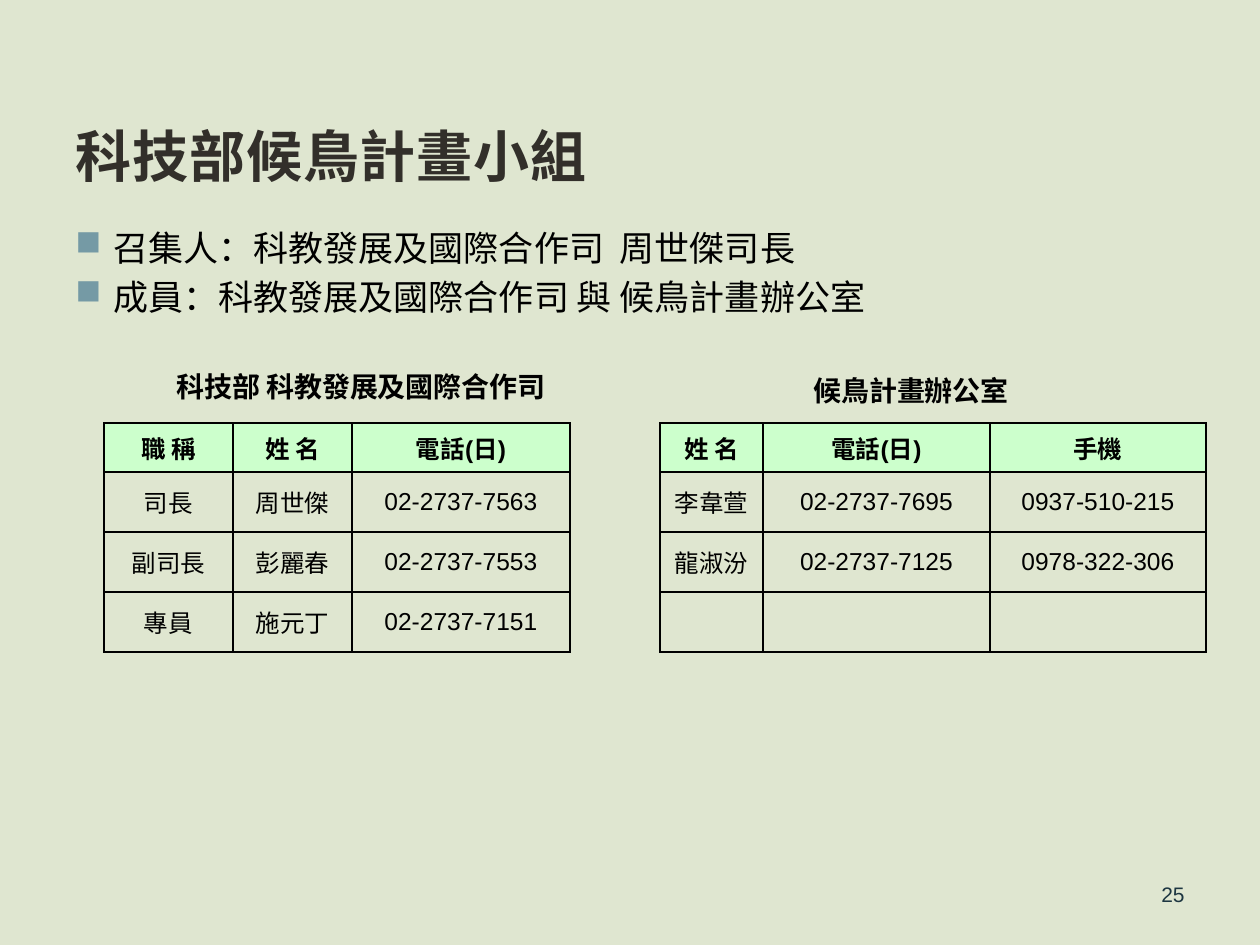
from lxml import etree
from pptx import Presentation
from pptx import util as u
from pptx.dml.color import RGBColor
from pptx.enum import text
from pptx.oxml import ns

PX = 914400 / 126
BACKGROUND = RGBColor(0xDF, 0xE6, 0xD0)
TITLE = RGBColor(0x32, 0x2F, 0x2A)
BLACK = RGBColor(0, 0, 0)
NUMBER = RGBColor(0x1D, 0x36, 0x41)
HEADER = RGBColor(0xCC, 0xFF, 0xCC)
BULLET = RGBColor(0x75, 0x9A, 0xA5)

presentation = Presentation()
presentation.slide_width = round(1260 * PX)
presentation.slide_height = round(945 * PX)
slide = presentation.slides.add_slide(presentation.slide_layouts[6])
slide.background.fill.solid()
slide.background.fill.fore_color.rgb = BACKGROUND


def style(paragraph, size, color=BLACK, bold=False, name="Arial"):
    paragraph.font.size = u.Pt(size)
    paragraph.font.color.rgb = color
    paragraph.font.bold = bold
    paragraph.font.name = name


def add_text(box, words, anchor=text.MSO_ANCHOR.MIDDLE, wrap=True):
    """Add a text box at box (left, top, width, height in px) and return its paragraphs."""
    frame = slide.shapes.add_textbox(*(round(value * PX) for value in box)).text_frame
    frame.word_wrap = wrap
    frame.vertical_anchor = anchor
    frame.text = words
    return frame.paragraphs


title = add_text((63, 38, 1134, 157), "科技部候鳥計畫小組", text.MSO_ANCHOR.BOTTOM)[0]
style(title, 32, TITLE, True, "Roboto")
title.runs[0]._r.get_or_add_rPr().set("spc", "50")

members = add_text(
    (63, 220, 1134, 624),
    "召集人：科教發展及國際合作司  周世傑司長\n成員：科教發展及國際合作司 與 候鳥計畫辦公室",
    text.MSO_ANCHOR.TOP,
)
for index, paragraph in enumerate(members):
    if index:
        paragraph.space_before = u.Pt(4)
    properties = paragraph._p.get_or_add_pPr()
    indent = round(38 * PX)
    properties.set("marL", str(indent))
    properties.set("indent", str(-indent))
    bullet_color = etree.SubElement(properties, ns.qn("a:buClr"))
    etree.SubElement(bullet_color, ns.qn("a:srgbClr"), val=str(BULLET))
    etree.SubElement(properties, ns.qn("a:buChar"), char="■")
    style(paragraph, 20)

page_number = add_text((903, 869, 294, 51), "25")[0]
page_number.alignment = text.PP_ALIGN.RIGHT
style(page_number, 12, NUMBER)

# Each group: caption, caption box, table left, column widths, rows
groups = [
    ("科技部 科教發展及國際合作司", (164, 363, 417, 47), 104, (129, 119, 218), [
        ("職 稱", "姓 名", "電話(日)"),
        ("司長", "周世傑", "02-2737-7563"),
        ("副司長", "彭麗春", "02-2737-7553"),
        ("專員", "施元丁", "02-2737-7151"),
    ]),
    ("候鳥計畫辦公室", (801, 367, 236, 47), 660, (103, 227, 216), [
        ("姓 名", "電話(日)", "手機"),
        ("李韋萱", "02-2737-7695", "0937-510-215"),
        ("龍淑汾", "02-2737-7125", "0978-322-306"),
        ("", "", ""),
    ]),
]
row_heights = (49, 60, 60, 60)

for caption, caption_box, left, widths, rows in groups:
    style(add_text(caption_box, caption, wrap=False)[0], 16, bold=True)
    table = slide.shapes.add_table(
        len(rows), len(widths), round(left * PX), round(423 * PX),
        round(sum(widths) * PX), round(sum(row_heights) * PX),
    ).table
    for column, width in zip(table.columns, widths):
        column.width = round(width * PX)
    for row_index, (words, height) in enumerate(zip(rows, row_heights)):
        table.rows[row_index].height = round(height * PX)
        for column_index, word in enumerate(words):
            cell = table.cell(row_index, column_index)
            cell.text = word
            cell.vertical_anchor = text.MSO_ANCHOR.MIDDLE
            paragraph = cell.text_frame.paragraphs[0]
            paragraph.alignment = text.PP_ALIGN.CENTER
            style(paragraph, 14, bold=row_index == 0)
            properties = cell._tc.get_or_add_tcPr()
            for side in ("lnL", "lnR", "lnT", "lnB"):
                border = etree.SubElement(properties, ns.qn("a:" + side), w=str(u.Pt(1)))
                fill = etree.SubElement(border, ns.qn("a:solidFill"))
                etree.SubElement(fill, ns.qn("a:srgbClr"), val=str(BLACK))
            if row_index == 0:
                cell.fill.solid()
                cell.fill.fore_color.rgb = HEADER
            else:
                cell.fill.background()

presentation.save("out.pptx")
